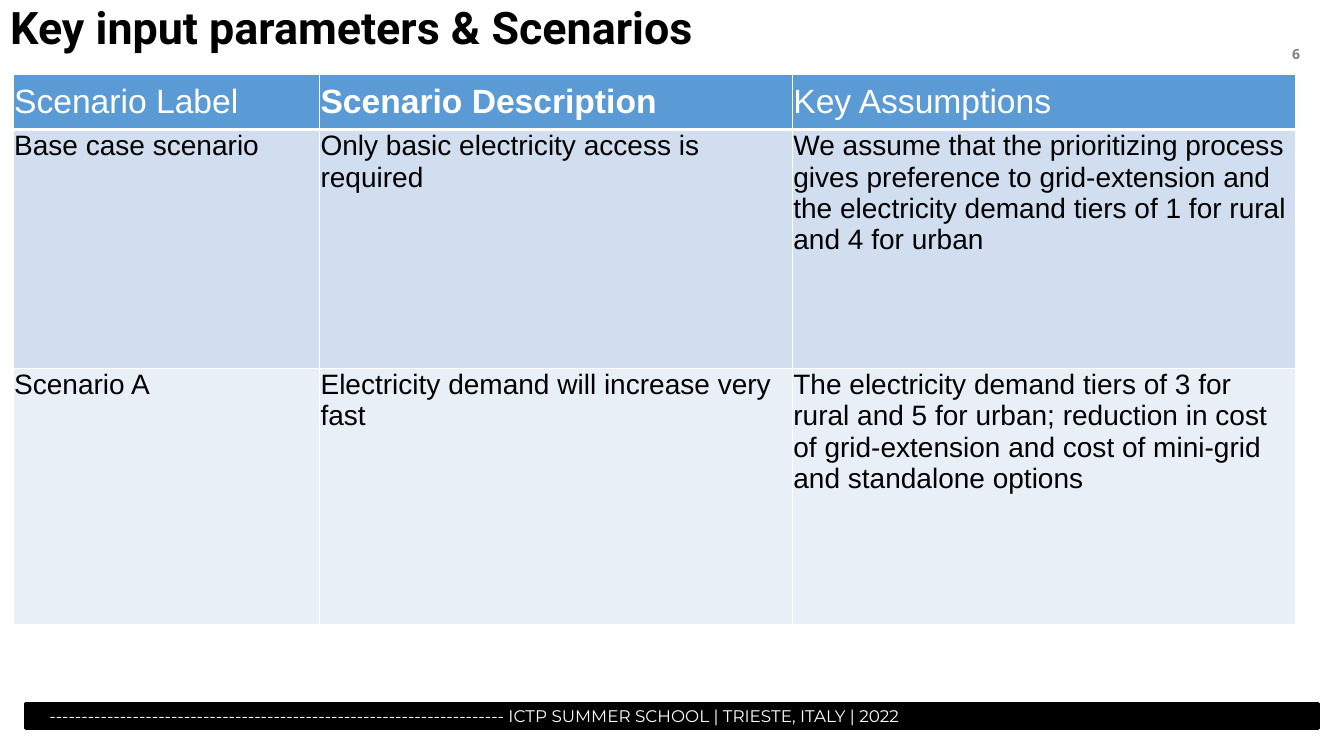
from lxml.etree import SubElement
from pptx import Presentation
from pptx.dml.color import RGBColor
from pptx.enum.shapes import MSO_SHAPE
from pptx.enum.text import MSO_ANCHOR, MSO_AUTO_SIZE, PP_ALIGN
from pptx.oxml.ns import qn
from pptx.util import Inches, Pt

COLORS = {
    "black": "000000",
    "white": "FFFFFF",
    "gray": "7F7F7F",
    "header": "5B9BD5",
    "band_dark": "D0DEEF",
    "band_light": "E9EFF7",
}
HEADINGS = ["Scenario Label", "Scenario Description", "Key Assumptions"]
SCENARIOS = [
    ["Base case scenario",
     "Only basic electricity access is required",
     "We assume that the prioritizing process gives preference to "
     "grid-extension and the electricity demand tiers of 1 for rural "
     "and 4 for urban"],
    ["Scenario A",
     "Electricity demand will increase very fast",
     "The electricity demand tiers of 3 for rural and 5 for urban; "
     "reduction in cost of grid-extension and cost of mini-grid and "
     "standalone options"],
]


class SlideBuilder:
    """Places elements on a grid of 100 columns by 100 rows."""

    def __init__(self, presentation):
        self.column = presentation.slide_width / 100
        self.row = presentation.slide_height / 100
        self.slide = presentation.slides.add_slide(presentation.slide_layouts[5])

    def box(self, left, top, width, height):
        return (round(left * self.column), round(top * self.row),
                round(width * self.column), round(height * self.row))

    def add_words(self, frame, text, font, size, color, bold=False, align=PP_ALIGN.LEFT):
        frame.word_wrap = True
        paragraph = frame.paragraphs[0]
        paragraph.alignment = align
        run = paragraph.add_run()
        run.text = text
        run.font.name = font
        run.font.size = Pt(size)
        run.font.bold = bold
        run.font.color.rgb = RGBColor.from_string(COLORS[color])
        return paragraph

    def title(self, text, place):
        shape = self.slide.shapes.title
        shape.left, shape.top, shape.width, shape.height = self.box(*place)
        frame = shape.text_frame
        frame.auto_size = MSO_AUTO_SIZE.NONE
        frame.vertical_anchor = MSO_ANCHOR.MIDDLE
        self.add_words(frame, text, "Roboto", 32, "black", True).line_spacing = 0.9

    def text(self, text, place, font, size, color, indent=0.1, **style):
        frame = self.slide.shapes.add_textbox(*self.box(*place)).text_frame
        frame.margin_left = Inches(indent)
        self.add_words(frame, text, font, size, color, **style)

    def bar(self, place, color):
        shape = self.slide.shapes.add_shape(MSO_SHAPE.RECTANGLE, *self.box(*place))
        shape.shadow.inherit = False
        shape.fill.solid()
        shape.fill.fore_color.rgb = RGBColor.from_string(COLORS[color])
        shape.line.color.rgb = RGBColor.from_string(COLORS[color])
        shape.line.width = Pt(2)

    def borders(self, cell, **widths):
        properties = cell._tc.get_or_add_tcPr()
        for position, side in enumerate("LRTB"):
            line = SubElement(properties, qn(f"a:ln{side}"), w=str(Pt(widths.get(side, 1))))
            fill = SubElement(line, qn("a:solidFill"))
            SubElement(fill, qn("a:srgbClr"), val=COLORS["white"])
            properties.insert(position, line)

    def cell(self, cell, text, fill, size, color, bold, anchor):
        cell.margin_left = cell.margin_top = cell.margin_right = Inches(0.01)
        cell.margin_bottom = 0
        cell.vertical_anchor = anchor
        cell.fill.solid()
        cell.fill.fore_color.rgb = RGBColor.from_string(COLORS[fill])
        self.add_words(cell.text_frame, text, "Arial", size, color, bold)

    def table(self, left, top, columns, rows, headings, records):
        place = self.box(left, top, sum(columns), sum(rows))
        table = self.slide.shapes.add_table(len(rows), len(columns), *place).table
        table.horz_banding = False
        for column, width in zip(table.columns, columns):
            column.width = round(width * self.column)
        for row, height in zip(table.rows, rows):
            row.height = round(height * self.row)
        # Header row
        for index, heading in enumerate(headings):
            cell = table.cell(0, index)
            self.cell(cell, heading, "header", 24, "white", index == 1, MSO_ANCHOR.MIDDLE)
            self.borders(cell, B=3)
        # Scenario rows
        for number, record in enumerate(records, 1):
            fill = "band_dark" if number % 2 else "band_light"
            for index, text in enumerate(record):
                cell = table.cell(number, index)
                self.cell(cell, text, fill, 20, "black", False, MSO_ANCHOR.TOP)
                self.borders(cell, T=3 if number == 1 else 1)


def main():
    presentation = Presentation()
    presentation.slide_width = Inches(13.33)
    presentation.slide_height = Inches(7.5)
    builder = SlideBuilder(presentation)

    # Title and page number
    builder.title("Key input parameters & Scenarios", (0, 0, 86.27, 7.87))
    builder.text("6", (94.67, 5.33, 3.53, 5.33), "Open Sans", 10, "gray",
                 bold=True, align=PP_ALIGN.CENTER)

    # Footer
    builder.bar((1.88, 93.07, 96.25, 3.33), "black")
    builder.text("-" * 71 + " ICTP SUMMER SCHOOL | TRIESTE, ITALY | 2022",
                 (1.95, 92.67, 95.42, 4), "Montserrat", 12, "white", indent=0.23)

    # Scenario table
    builder.table(0.98, 9.8, [22.8, 35.18, 37.43], [7.33, 31.6, 33.87],
                  HEADINGS, SCENARIOS)

    presentation.save("out.pptx")


if __name__ == "__main__":
    main()
